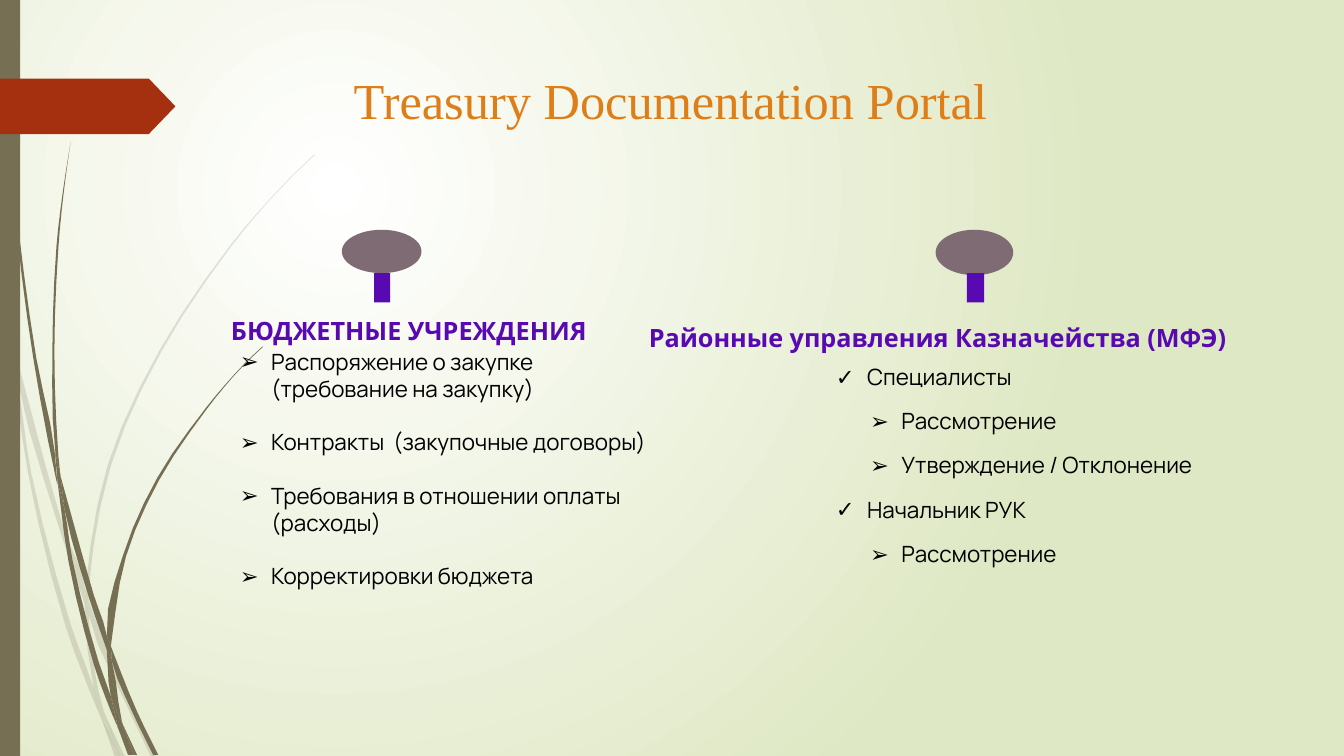
import pptx
import pptx.dml.color
import pptx.enum.shapes
import pptx.enum.text
import pptx.oxml
import pptx.oxml.ns
import pptx.util

Inches = pptx.util.Inches
Pt = pptx.util.Pt
SHAPE = pptx.enum.shapes.MSO_SHAPE
ALIGN = pptx.enum.text.PP_ALIGN
qn = pptx.oxml.ns.qn

HUES = {
    "white": "FFFFFF", "lime": "DFE8C4", "olive": "766F54", "rust": "A53010",
    "orange": "DE7E18", "mauve": "7E6B73", "violet": "5809B2", "black": "000000",
}

# Grass blades: corner points as x, y pairs in inches
PALE = [
    (0.11, 3.5, 0.09, 3.22, 0, 2.82, 0, 2.99, 0.1, 3.44),
    (0.58, 5.22, 0.84, 5.99, 0.85, 5.86, 0.62, 5.2, 0.14, 3.45, 0.17, 3.76),
    (0.92, 6.07, 0.88, 5.96, 0.88, 6.1, 1.23, 6.94, 1.5, 7.51, 1.55, 7.51, 1.27, 6.92),
    (1.19, 7.51, 1.24, 7.51, 1.05, 7.11),
    (0.93, 6.83, 0.7, 6.19, 0.31, 4.69, 0.17, 3.76, 0.11, 3.5, 0.28, 4.7,
     0.65, 6.21, 0.92, 6.93, 1.01, 7.14, 0.99, 7.07),
    (0.84, 5.99, 0.87, 6.46, 0.93, 6.83, 0.96, 6.92, 1.05, 7.11, 1.03, 7.06,
     0.91, 6.46, 0.88, 6.1, 0.88, 6.08),
    (0.88, 5.84, 1.1, 4.62, 1.6, 3.49, 2.29, 2.45, 2.68, 1.98, 2.9, 1.75,
     3.12, 1.54, 3.12, 1.53, 2.89, 1.75, 2.68, 1.97, 2.28, 2.44, 1.58, 3.48,
     1.07, 4.61, 0.85, 5.84, 0.85, 5.86, 0.88, 5.96),
    (1.01, 7.14, 1.14, 7.51, 1.19, 7.51),
    (0.88, 6.08, 0.88, 6.1, 0.88, 5.96, 0.85, 5.86, 0.84, 5.99),
    (0.96, 6.92, 0.93, 6.83, 0.99, 7.07, 1.01, 7.14, 1.19, 7.51, 1.05, 7.11),
]
DARK = [
    (0.07, 1.1, 0.17, 2.33, 0.33, 3.55, 0.56, 4.77, 0.57, 4.81, 0.55, 4.57,
     0.55, 4.53, 0.36, 3.55, 0.19, 2.32, 0.08, 1.09, 0.05, 0.48, 0.04, 0,
     0.03, 0, 0.04, 0.48),
    (0.88, 5.92, 1.06, 6.45, 1.06, 6.31, 0.93, 5.9, 0.6, 4.72, 0.64, 5.05),
    (1.13, 6.49, 1.1, 6.41, 1.11, 6.56, 1.32, 7.08, 1.52, 7.49, 1.57, 7.49, 1.36, 7.06),
    (1.1, 6.91, 0.98, 6.57, 0.72, 5.56, 0.64, 5.05, 0.57, 4.77, 0.68, 5.57,
     0.93, 6.59, 1.11, 7.08, 1.17, 7.22, 1.16, 7.17),
    (0.6, 4.72, 0.58, 4.53, 0.54, 3.49, 0.58, 2.45, 0.63, 1.93, 0.7, 1.41,
     0.62, 1.93, 0.56, 2.45, 0.52, 3.49, 0.55, 4.49),
    (1.33, 7.49, 1.36, 7.49, 1.22, 7.19),
    (0.57, 4.77, 0.64, 5.05, 0.6, 4.72, 0.55, 4.49, 0.55, 4.53),
    (1.11, 6.33, 1.25, 5.52, 1.58, 4.76, 2.05, 4.06, 2.31, 3.74, 2.45, 3.59,
     2.61, 3.44, 2.6, 3.44, 2.45, 3.58, 2.31, 3.73, 2.04, 4.05, 1.56, 4.74,
     1.22, 5.51, 1.06, 6.31, 1.1, 6.41),
    (1.17, 7.22, 1.27, 7.49, 1.31, 7.49),
    (1.06, 6.45, 1.1, 6.91, 1.16, 7.06, 1.22, 7.19, 1.21, 7.16, 1.11, 6.56, 1.09, 6.51),
    (1.06, 6.45, 1.09, 6.51, 1.11, 6.56, 1.1, 6.41, 1.06, 6.31),
    (1.16, 7.06, 1.1, 6.91, 1.16, 7.17, 1.17, 7.22, 1.3, 7.49, 1.33, 7.49, 1.22, 7.19),
]

ORDERS = [
    (1, 0.5, "➢", "Распоряжение о закупке (требование на закупку)"),
    (1, 0.5, "➢", "Контракты  (закупочные договоры)"),
    (1, 0.5, "➢", "Требования в отношении оплаты (расходы)"),
    (1, 0.5, "➢", "Корректировки бюджета"),
]
STAFF = [
    (1, 0.52, "✓", "Специалисты"),
    (2, 0.86, "➢", "Рассмотрение"),
    (2, 0.86, "➢", "Утверждение / Отклонение"),
    (1, 0.52, "✓", "Начальник РУК"),
    (2, 0.86, "➢", "Рассмотрение"),
]


def smooth(flat):
    """Round the long edges of a closed outline, keeping sharp turns sharp."""
    pts = [complex(x, y) for x, y in zip(flat[::2], flat[1::2])]
    size = len(pts)
    edges = [pts[(i + 1) % size] - pts[i] for i in range(size)]
    units = [edge / abs(edge) for edge in edges]

    def lean(i, own):
        before, after = units[i - 1], units[i % size]
        if (before * after.conjugate()).real < 0.8:
            return own
        return (before + after) / abs(before + after)

    curve = []
    for i, edge in enumerate(edges):
        start, end, reach = pts[i], pts[i] + edge, abs(edge) / 3
        first = start + lean(i, units[i]) * reach
        second = end - lean(i + 1, units[i]) * reach
        steps = 3 if abs(edge) > 0.4 else 1
        for k in range(steps):
            t = k / steps
            s = 1 - t
            curve.append(s**3 * start + 3 * s * s * t * first
                         + 3 * s * t * t * second + t**3 * end)
    return [(Inches(p.real), Inches(p.imag)) for p in curve]


class Deck:
    def __init__(self):
        self.show = pptx.Presentation()
        self.show.slide_width = Inches(13.33)
        self.show.slide_height = Inches(7.5)
        self.slide = self.show.slides.add_slide(self.show.slide_layouts[6])

    def hue(self, name):
        return pptx.dml.color.RGBColor.from_string(HUES[name])

    def glow(self, inner, outer):
        """Fill the background with a round gradient."""
        fill = self.slide.background.fill
        fill.gradient()
        for stop, name in zip(fill.gradient_stops, (inner, outer)):
            stop.color.rgb = self.hue(name)
        grad = next(self.slide.element.iter(qn("a:gradFill")))
        ring = pptx.oxml.parse_xml(
            '<a:path xmlns:a="http://schemas.openxmlformats.org/drawingml/2006/main" '
            'path="circle"><a:fillToRect l="50000" t="50000" r="100000" b="100000"/></a:path>')
        grad.replace(grad.find(qn("a:lin")), ring)

    def paint(self, shape, name):
        shape.shadow.inherit = False
        shape.fill.solid()
        shape.fill.fore_color.rgb = self.hue(name)
        shape.line.fill.background()
        return shape

    def form(self, kind, box, name):
        return self.paint(self.slide.shapes.add_shape(kind, *map(Inches, box)), name)

    def blade(self, flat, name, alpha=None):
        first, *rest = smooth(flat)
        maker = self.slide.shapes.build_freeform(*first)
        maker.add_line_segments(rest, close=True)
        shape = self.paint(maker.convert_to_shape(), name)
        if alpha:
            tint = next(shape.element.spPr.iter(qn("a:srgbClr")))
            tint.append(tint.makeelement(qn("a:alpha"), {"val": str(alpha * 1000)}))

    def frame(self, box, inset=True):
        frame = self.slide.shapes.add_textbox(*map(Inches, box)).text_frame
        frame.word_wrap = True
        frame.auto_size = pptx.enum.text.MSO_AUTO_SIZE.SHAPE_TO_FIT_TEXT
        if not inset:
            frame.margin_left = frame.margin_right = 0
            frame.margin_top = frame.margin_bottom = 0
        return frame

    def style(self, para, face, size, name, bold=False):
        font = para.font
        font.name, font.size, font.bold = face, Pt(size), bold
        font.color.rgb = self.hue(name)

    def title(self, box, text, indent):
        para = self.frame(box).paragraphs[0]
        para.text = text
        para._p.get_or_add_pPr().set("marL", str(Inches(indent)))
        self.style(para, "Times New Roman", 36, "orange")

    def head(self, box, text):
        para = self.frame(box, False).paragraphs[0]
        para.text = text
        para.alignment = ALIGN.CENTER
        para.line_spacing = Pt(45.6)
        self.style(para, "Open Sans", 18, "violet", True)

    def points(self, box, items, pitch=None, gap=0):
        frame = self.frame(box, False)
        for i, (level, left, sign, text) in enumerate(items):
            para = frame.add_paragraph() if i else frame.paragraphs[0]
            para.text, para.level = text, level
            props = para._p.get_or_add_pPr()
            props.set("marL", str(Inches(left)))
            props.set("indent", str(Inches(-0.31)))
            props.append(props.makeelement(qn("a:buFont"), {"typeface": "Manrope"}))
            props.append(props.makeelement(qn("a:buChar"), {"char": sign}))
            if pitch:
                para.line_spacing = Pt(pitch)
            if i and gap:
                para.space_before = Pt(gap)
            self.style(para, "Manrope", 16, "black")


def main():
    deck = Deck()
    deck.glow("white", "lime")
    for flat in PALE:
        deck.blade(flat, "olive", 20)
    for flat in DARK:
        deck.blade(flat, "olive")
    deck.form(SHAPE.RECTANGLE, (0, 0, 0.2, 7.5), "olive")
    arrow = deck.form(SHAPE.PENTAGON, (0, 0.78, 1.74, 0.55), "rust")
    arrow.adjustments[0] = 0.48
    deck.title((2.79, 0.64, 7.66, 0.71), "Treasury Documentation Portal", 0.62)
    for left, width, high, stem, thick in ((3.39, 0.79, 0.43, 3.71, 0.16),
                                           (9.28, 0.77, 0.45, 9.59, 0.17)):
        deck.form(SHAPE.OVAL, (left, 2.28, width, high), "mauve")
        deck.form(SHAPE.RECTANGLE, (stem, 2.71, thick, 0.29), "violet")
    deck.head((1.89, 2.79, 4.33, 0.54), "БЮДЖЕТНЫЕ УЧРЕЖДЕНИЯ")
    deck.points((2.19, 3.45, 4.3, 2.85), ORDERS, gap=19.1)
    deck.points((8.08, 3.43, 4.29, 2.54), STAFF, pitch=31.6)
    deck.head((6.23, 2.86, 6.14, 0.54), "Районные управления Казначейства (МФЭ)")
    deck.show.save("out.pptx")


if __name__ == "__main__":
    main()
